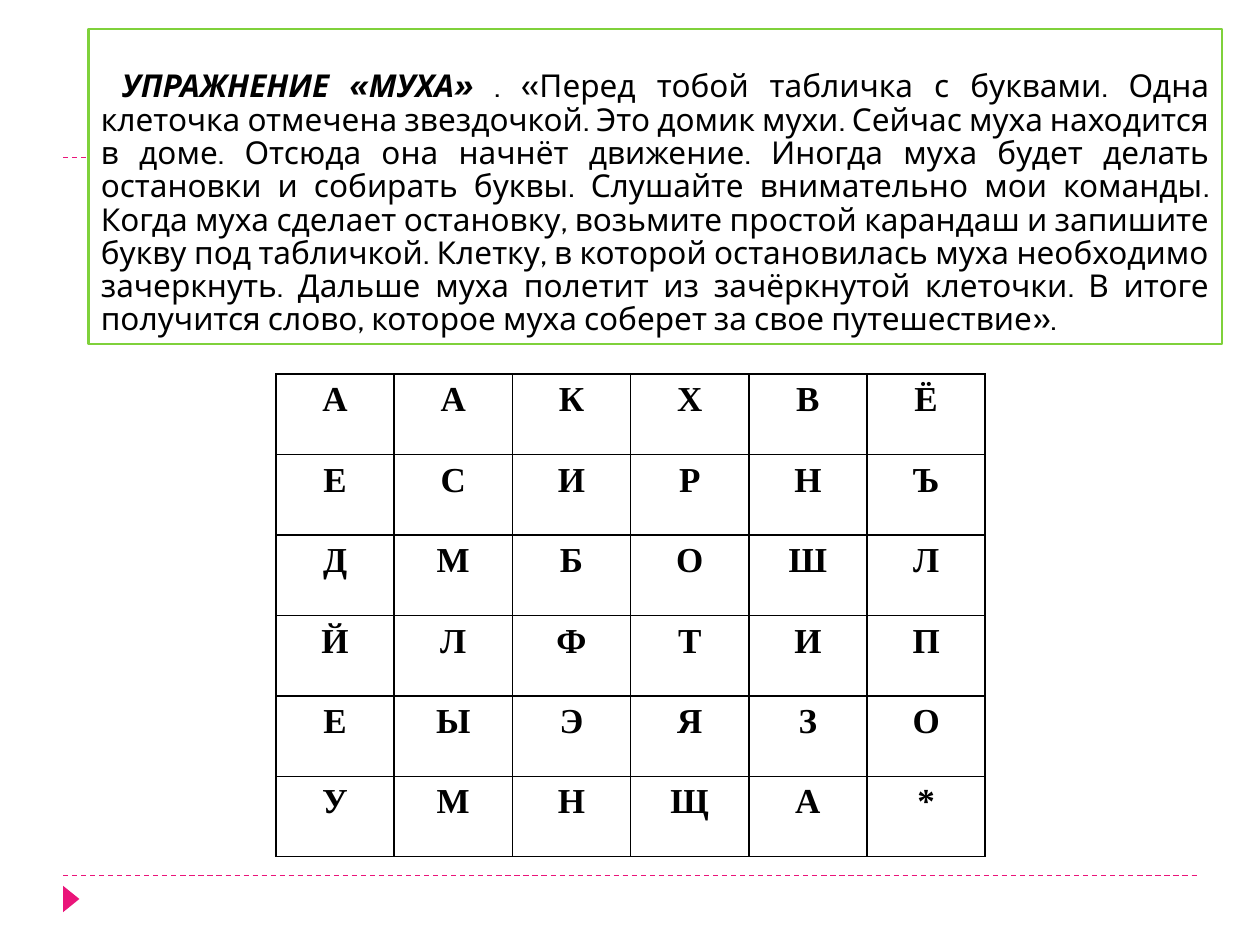
"""Build the letter-table exercise slide."""
import pptx
import pptx.dml.color
import pptx.enum.dml
import pptx.enum.shapes
import pptx.enum.text
import pptx.oxml
import pptx.oxml.ns
import pptx.util

Inches = pptx.util.Inches
Pt = pptx.util.Pt

THEME = {
    "accent": "EA157A", "frame": "7FD13B", "paper": "FFFFFF", "ink": "000000",
    "task_font": "Cabin", "task_size": 18, "task_spacing": 0.88,
    "letter_font": "Times New Roman", "letter_size": 20,
}
TASK = [
    (" ", False),
    ("УПРАЖНЕНИЕ «МУХА» ", True),
    (". «Перед тобой табличка с буквами. Одна клеточка отмечена звездочкой. "
     "Это домик мухи. Сейчас муха находится в доме. Отсюда она начнёт движение. "
     "Иногда муха будет делать остановки и собирать буквы. Слушайте внимательно "
     "мои команды. Когда муха сделает остановку, возьмите простой карандаш и "
     "запишите букву под табличкой. Клетку, в которой остановилась муха "
     "необходимо зачеркнуть. Дальше муха полетит из зачёркнутой клеточки. "
     "В итоге получится слово, которое муха соберет за свое путешествие».", False),
]
LETTERS = ["ААКХВЁ", "ЕСИРНЪ", "ДМБОШЛ", "ЙЛФТИП", "ЕЫЭЯЗО", "УМНЩА*"]
RULE_HEIGHTS = [6.95, 1.25]
TASK_BOX = (0.7, 0.23, 9, 2.5)
MARKER_BOX = (0.46, 7.07, 0.21, 0.13)
TABLE_BOX = (2.19, 2.97, 5.63, 3.83)


def color(name):
    """Return a theme colour."""
    return pptx.dml.color.RGBColor.from_string(THEME[name])


def add_text(paragraph, text, font, size, bold=False, italic=False):
    """Add a formatted run to a paragraph."""
    run = paragraph.add_run()
    run.text = text
    run.font.name = font
    run.font.size = Pt(size)
    run.font.bold = bold
    run.font.italic = italic
    run.font.color.rgb = color("ink")


def add_rule(slide, height):
    """Add a dashed horizontal rule across the slide."""
    rule = slide.shapes.add_connector(
        pptx.enum.shapes.MSO_CONNECTOR.STRAIGHT,
        Inches(0.5), Inches(height), Inches(9.5), Inches(height))
    rule.line.color.rgb = color("accent")
    rule.line.width = Pt(0.75)
    rule.line.dash_style = pptx.enum.dml.MSO_LINE.DASH
    properties = rule.element.find(pptx.oxml.ns.qn("p:spPr"))
    properties.append(pptx.oxml.parse_xml(
        f'<a:effectLst {pptx.oxml.ns.nsdecls("a")}/>'))


def add_marker(slide):
    """Add the triangle pointing right in the footer."""
    marker = slide.shapes.add_shape(
        pptx.enum.shapes.MSO_SHAPE.ISOSCELES_TRIANGLE, *map(Inches, MARKER_BOX))
    marker.rotation = 90
    marker.shadow.inherit = False
    marker.fill.solid()
    marker.fill.fore_color.rgb = color("accent")
    marker.line.fill.background()


def place_task(slide):
    """Format the title placeholder as the framed task above the rules."""
    title = slide.shapes.title
    title.left, title.top, title.width, title.height = map(Inches, TASK_BOX)
    title.fill.solid()
    title.fill.fore_color.rgb = color("paper")
    title.line.color.rgb = color("frame")
    title.line.width = Pt(1.5)
    frame = title.text_frame
    frame.word_wrap = True
    frame.auto_size = pptx.enum.text.MSO_AUTO_SIZE.NONE
    frame.vertical_anchor = pptx.enum.text.MSO_ANCHOR.BOTTOM
    paragraph = frame.paragraphs[0]
    paragraph.alignment = pptx.enum.text.PP_ALIGN.JUSTIFY
    paragraph.line_spacing = THEME["task_spacing"]
    for text, strong in TASK:
        add_text(paragraph, text, THEME["task_font"], THEME["task_size"],
                 bold=strong, italic=strong)
    slide.shapes.element.append(title.element)


def add_borders(cell):
    """Draw a thin line on every side of a cell."""
    properties = cell._tc.get_or_add_tcPr()
    for side in ("lnL", "lnR", "lnT", "lnB"):
        properties.append(pptx.oxml.parse_xml(
            f'<a:{side} {pptx.oxml.ns.nsdecls("a")} w="{Pt(1)}"><a:solidFill>'
            f'<a:srgbClr val="{THEME["ink"]}"/></a:solidFill></a:{side}>'))


def add_letter_table(slide):
    """Add the square table with one letter in each cell."""
    table = slide.shapes.add_table(
        len(LETTERS), len(LETTERS[0]), *map(Inches, TABLE_BOX)).table
    table.first_row = False
    table.horz_banding = False
    for row, letters in enumerate(LETTERS):
        for column, letter in enumerate(letters):
            cell = table.cell(row, column)
            add_borders(cell)
            cell.fill.background()
            paragraph = cell.text_frame.paragraphs[0]
            paragraph.alignment = pptx.enum.text.PP_ALIGN.CENTER
            add_text(paragraph, letter, THEME["letter_font"],
                     THEME["letter_size"], bold=True)


def main():
    """Build and save the presentation."""
    presentation = pptx.Presentation()
    presentation.slide_width = Inches(10)
    presentation.slide_height = Inches(7.5)
    slide = presentation.slides.add_slide(presentation.slide_layouts[5])
    slide.background.fill.solid()
    slide.background.fill.fore_color.rgb = color("paper")
    for height in RULE_HEIGHTS:
        add_rule(slide, height)
    add_marker(slide)
    place_task(slide)
    add_letter_table(slide)
    presentation.save("out.pptx")


if __name__ == "__main__":
    main()
